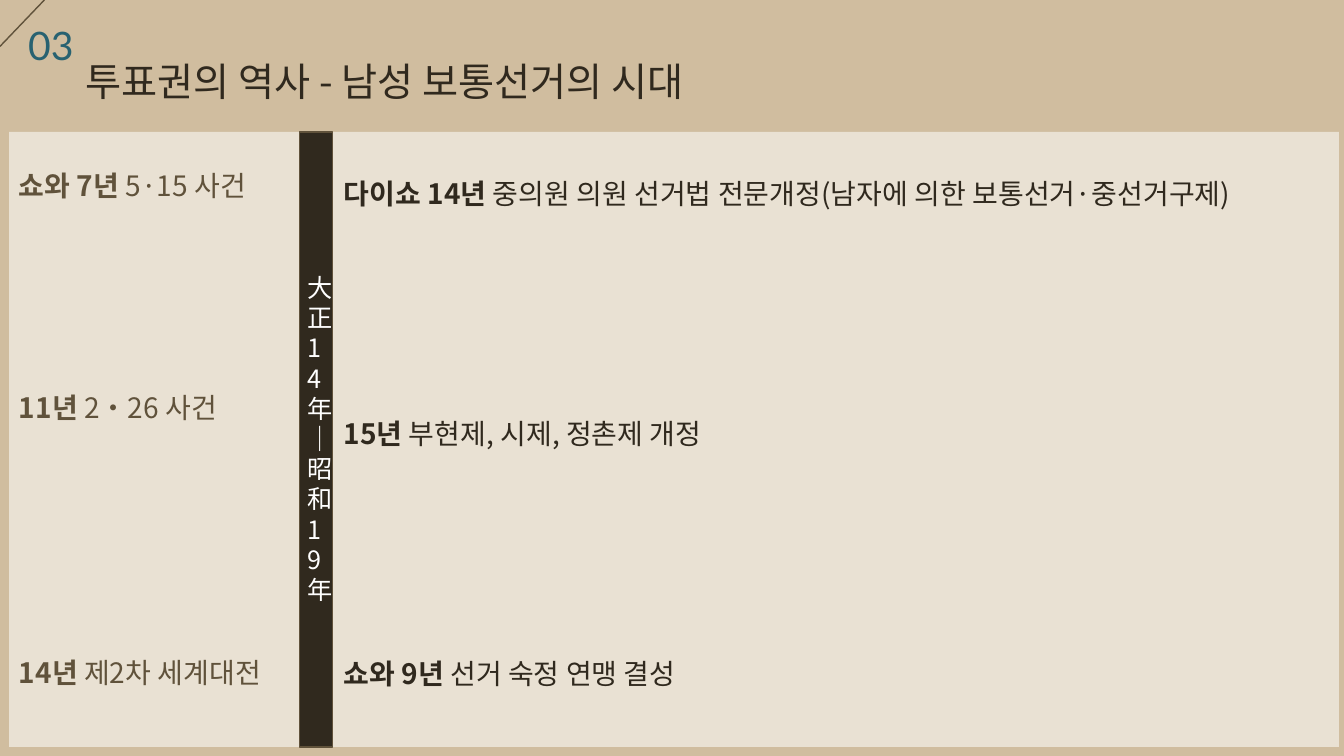
import pptx
import pptx.dml.color
import pptx.enum.shapes
import pptx.enum.text
import pptx.oxml
import pptx.oxml.ns
import pptx.util
from pptx.util import Inches

ALIGN = pptx.enum.text.PP_ALIGN
NUMBER = "03"
TITLE = "투표권의 역사 - 남성 보통선거의 시대"
ERA = "大正14年｜昭和19年"
INCIDENTS = [
    ("쇼와 7년 ", "5·15 사건", 0),
    ("11년 ", "2・26 사건", 137),
    ("14년", " 제2차 세계대전", 168),
]
REFORMS = [
    ("다이쇼 14년 ", "중의원 의원 선거법 전문개정(남자에 의한 보통선거·중선거구제)", 0),
    ("15년 ", "부현제, 시제, 정촌제 개정", 143),
    ("쇼와 9년", " 선거 숙정 연맹 결성", 143),
]
THEME = {
    "sand": "D0BD9F", "white": "FFFFFF", "dark": "30291E",
    "brown": "60523B", "teal": "286271",
    "korean": "Noto Sans CJK KR", "latin": "Lato",
    "heading": 28, "body": 20, "era": 18,
}


def color(name):
    return pptx.dml.color.RGBColor.from_string(THEME[name])


def apply(target, values):
    for name, value in values.items():
        setattr(target, name, value)


def add_span(para, text, size, tint, face="korean", bold=False):
    span = para.add_run()
    span.text = text
    apply(span.font, {"size": pptx.util.Pt(THEME[size]), "name": THEME[face], "bold": bold})
    span.font.color.rgb = color(tint)
    east = pptx.oxml.parse_xml(
        f'<a:ea {pptx.oxml.ns.nsdecls("a")} typeface="{THEME[face]}"/>')
    span.font._element.find(pptx.oxml.ns.qn("a:latin")).addnext(east)


def prepare_frame(box):
    apply(box.text_frame, {
        "word_wrap": True,
        "auto_size": pptx.enum.text.MSO_AUTO_SIZE.NONE,
        "vertical_anchor": pptx.enum.text.MSO_ANCHOR.TOP,
    })
    return box.text_frame


def add_frame(page, place):
    return prepare_frame(page.shapes.add_textbox(*map(Inches, place)))


def add_events(page, place, events, tint, para_format):
    frame = add_frame(page, place)
    for index, (date, event, gap) in enumerate(events):
        para = frame.add_paragraph() if index else frame.paragraphs[0]
        apply(para, para_format)
        if gap:
            para.space_before = pptx.util.Pt(gap)
        add_span(para, date, "body", tint, bold=True)
        add_span(para, event, "body", tint)


def add_rectangle(page, place, tint):
    shape = page.shapes.add_shape(
        pptx.enum.shapes.MSO_SHAPE.RECTANGLE, *map(Inches, place))
    shape.shadow.inherit = False
    shape.fill.solid()
    shape.fill.fore_color.rgb = color(tint)
    return shape


def set_line(shape):
    shape.line.color.rgb = color("brown")
    shape.line.width = pptx.util.Pt(1)


def main():
    deck = pptx.Presentation()
    apply(deck, {"slide_width": Inches(13.33), "slide_height": Inches(7.5)})
    page = deck.slides.add_slide(deck.slide_layouts[5])
    page.background.fill.solid()
    page.background.fill.fore_color.rgb = color("sand")

    panel = add_rectangle(page, (0.09, 1.31, 13.19, 6.1), "white")
    panel.line.fill.background()
    fill_color = panel.fill._xPr.find(".//" + pptx.oxml.ns.qn("a:srgbClr"))
    fill_color.append(pptx.oxml.parse_xml(
        f'<a:alpha {pptx.oxml.ns.nsdecls("a")} val="55000"/>'))

    corner = page.shapes.add_connector(
        pptx.enum.shapes.MSO_CONNECTOR.STRAIGHT, *map(Inches, (0.44, 0, 0, 0.46)))
    set_line(corner)
    corner._element.spPr.append(pptx.oxml.parse_xml(
        f'<a:effectLst {pptx.oxml.ns.nsdecls("a")}/>'))

    number = add_frame(page, (0.18, 0.16, 0.79, 0.57))
    add_span(number.paragraphs[0], NUMBER, "heading", "teal", face="latin")

    title = page.shapes.title
    apply(title, dict(zip(("left", "top", "width", "height"),
                          map(Inches, (0.75, 0.52, 6.87, 0.57)))))
    heading = prepare_frame(title).paragraphs[0]
    heading.alignment = ALIGN.LEFT
    add_span(heading, TITLE, "heading", "dark")

    bar = add_rectangle(page, (2.97, 1.31, 0.33, 6.1), "dark")
    set_line(bar)
    era = add_frame(page, (2.95, 2.65, 0.36, 3.39))
    add_span(era.paragraphs[0], ERA, "era", "white")

    add_events(page, (3.31, 1.64, 10.02, 5.6), REFORMS, "dark",
               {"alignment": ALIGN.JUSTIFY, "line_spacing": 1.19})
    add_events(page, (0.09, 1.66, 2.76, 5.75), INCIDENTS, "brown",
               {"alignment": ALIGN.LEFT, "line_spacing": 0.9})
    deck.save("out.pptx")


if __name__ == "__main__":
    main()
